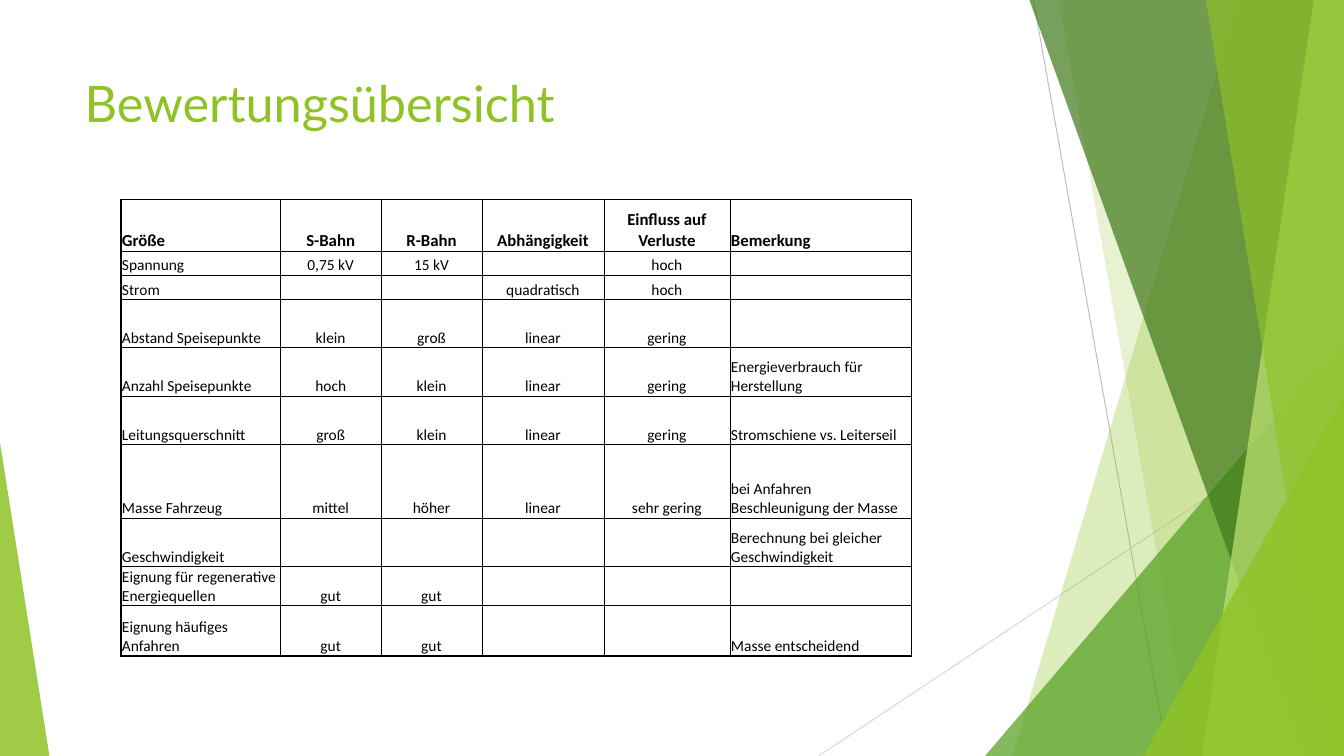
import dataclasses

import pptx
import pptx.dml.color
import pptx.enum.shapes
import pptx.enum.text
import pptx.oxml
import pptx.oxml.ns
import pptx.util

Inches = pptx.util.Inches
Pt = pptx.util.Pt
RGB = pptx.dml.color.RGBColor.from_string
ALIGN = pptx.enum.text.PP_ALIGN
ANCHOR = pptx.enum.text.MSO_ANCHOR
WIDTH, HEIGHT = 13.33, 7.5


@dataclasses.dataclass(frozen=True)
class Theme:
    lime: str = "90C226"
    green: str = "54A021"
    forest: str = "3F7819"
    pale: str = "C0E474"
    grey: str = "BFBFBF"
    light_grey: str = "D9D9D9"
    ink: str = "000000"
    title_font: str = "Lato"
    table_font: str = "Calibri"
    title_size: int = 36
    header_size: int = 12
    body_size: int = 11
    hairline: float = 0.75
    inner_border: float = 0.5
    outer_border: float = 1


class SlideBuilder:
    def __init__(self, prs, theme):
        self.theme = theme
        self.slide = prs.slides.add_slide(prs.slide_layouts[5])
        self.shapes = self.slide.shapes

    def set_font(self, p, name, size, color, bold=False):
        p.font.name = name
        p.font.size = Pt(size)
        p.font.bold = bold
        p.font.color.rgb = RGB(color)

    def paint(self, sp, color, opacity):
        sp.shadow.inherit = False
        sp.line.fill.background()
        sp.fill.solid()
        sp.fill.fore_color.rgb = RGB(color)
        clr = sp.fill._xPr.find(".//" + pptx.oxml.ns.qn("a:srgbClr"))
        alpha = pptx.oxml.parse_xml(f'<a:alpha {pptx.oxml.ns.nsdecls("a")} val="{opacity * 1000}"/>')
        clr.append(alpha)

    def line(self, x1, y1, x2, y2, color):
        cxn = self.shapes.add_connector(
            pptx.enum.shapes.MSO_CONNECTOR.STRAIGHT, Inches(x1), Inches(y1), Inches(x2), Inches(y2))
        cxn.line.color.rgb = RGB(color)
        cxn.line.width = Pt(self.theme.hairline)
        cxn._element.spPr.append(pptx.oxml.parse_xml(f'<a:effectLst {pptx.oxml.ns.nsdecls("a")}/>'))

    def band(self, top_x, bottom_x, color, opacity):
        fb = self.shapes.build_freeform(Inches(top_x), Inches(0), scale=1.0)
        corners = [(WIDTH, 0), (WIDTH, HEIGHT), (bottom_x, HEIGHT)]
        fb.add_line_segments([(Inches(x), Inches(y)) for x, y in corners], close=True)
        self.paint(fb.convert_to_shape(), color, opacity)

    def triangle(self, left, top, width, apex, color, opacity):
        sp = self.shapes.add_shape(
            pptx.enum.shapes.MSO_SHAPE.ISOSCELES_TRIANGLE,
            Inches(left), Inches(top), Inches(width), Inches(HEIGHT - top))
        sp.adjustments[0] = apex
        self.paint(sp, color, opacity)

    def title(self, text, left, top, width, height):
        sp = self.shapes.title
        sp.left, sp.top, sp.width, sp.height = map(Inches, (left, top, width, height))
        tf = sp.text_frame
        tf.text = text
        tf.vertical_anchor = ANCHOR.TOP
        p = tf.paragraphs[0]
        p.alignment = ALIGN.LEFT
        self.set_font(p, self.theme.title_font, self.theme.title_size, self.theme.lime)

    def border(self, cell, side, width):
        cell._tc.get_or_add_tcPr().append(pptx.oxml.parse_xml(
            f'<a:ln{side} {pptx.oxml.ns.nsdecls("a")} w="{int(Pt(width))}">'
            f'<a:solidFill><a:srgbClr val="{self.theme.ink}"/></a:solidFill></a:ln{side}>'))

    def cell(self, cell, text, header, centered, outer_sides):
        t = self.theme
        cell.margin_left = cell.margin_right = cell.margin_top = Inches(0.01)
        cell.margin_bottom = 0
        cell.vertical_anchor = ANCHOR.BOTTOM
        cell.text = text
        p = cell.text_frame.paragraphs[0]
        p.alignment = ALIGN.CENTER if centered else ALIGN.LEFT
        size = t.header_size if header else t.body_size
        self.set_font(p, t.table_font, size, t.ink, header)
        if not text:
            p._p.get_or_add_endParaRPr().set("sz", str(size * 100))
        for side in "LRTB":
            self.border(cell, side, t.outer_border if side in outer_sides else t.inner_border)
        cell.fill.background()

    def table(self, rows, left, top, widths, heights):
        frame = self.shapes.add_table(
            len(rows), len(widths), Inches(left), Inches(top), Inches(sum(widths)), Inches(sum(heights)))
        tbl = frame.table
        tbl.first_row = tbl.horz_banding = False
        for column, width in zip(tbl.columns, widths):
            column.width = Inches(width)
        for row, height in zip(tbl.rows, heights):
            row.height = Inches(height)
        last_row, last_col = len(rows) - 1, len(widths) - 1
        for i, row in enumerate(rows):
            for j, text in enumerate(row):
                edges = {"L": j == 0, "R": j == last_col, "T": i == 0, "B": i == last_row}
                outer = [side for side, on_edge in edges.items() if on_edge]
                self.cell(tbl.cell(i, j), text, i == 0, 0 < j < last_col, outer)


RATINGS = [
    ["Größe", "S-Bahn", "R-Bahn", "Abhängigkeit", "Einfluss auf Verluste", "Bemerkung"],
    ["Spannung", "0,75 kV", "15 kV", "", "hoch", ""],
    ["Strom", "", "", "quadratisch", "hoch", ""],
    ["Abstand Speisepunkte", "klein", "groß", "linear", "gering", ""],
    ["Anzahl Speisepunkte", "hoch", "klein", "linear", "gering", "Energieverbrauch für Herstellung"],
    ["Leitungsquerschnitt", "groß", "klein", "linear", "gering", "Stromschiene vs. Leiterseil"],
    ["Masse Fahrzeug", "mittel", "höher", "linear", "sehr gering", "bei Anfahren Beschleunigung der Masse"],
    ["Geschwindigkeit", "", "", "", "", "Berechnung bei gleicher Geschwindigkeit"],
    ["Eignung für regenerative Energiequellen", "gut", "gut", "", "", ""],
    ["Eignung häufiges Anfahren", "gut", "gut", "", "", "Masse entscheidend"],
]
COLUMN_WIDTHS = [1.58, 1, 1, 1.21, 1.25, 1.8]
ROW_HEIGHTS = [0.51, 0.24, 0.24, 0.48, 0.48, 0.48, 0.73, 0.48, 0.39, 0.5]


def main():
    prs = pptx.Presentation()
    prs.slide_width, prs.slide_height = Inches(WIDTH), Inches(HEIGHT)
    t = Theme()
    s = SlideBuilder(prs, t)
    s.line(10.25, 0, 11.58, HEIGHT, t.grey)
    s.line(WIDTH, 4.03, 8.12, HEIGHT, t.light_grey)
    s.band(12.28, 10.04, t.lime, 30)
    s.band(10.5, 11.83, t.lime, 20)
    s.triangle(9.77, 3.33, 3.56, 1, t.green, 72)
    s.band(10.21, 12.91, t.forest, 70)
    s.band(13.03, 11.92, t.pale, 70)
    s.band(11.96, 13.18, t.lime, 65)
    s.triangle(11.34, 3.93, 1.99, 1, t.lime, 80)
    s.triangle(0, 4.39, 0.49, 0, t.lime, 85)
    s.title("Bewertungsübersicht", 0.74, 0.67, 9.4, 1.44)
    s.table(RATINGS, 1.2, 1.98, COLUMN_WIDTHS, ROW_HEIGHTS)
    prs.save("out.pptx")


if __name__ == "__main__":
    main()
